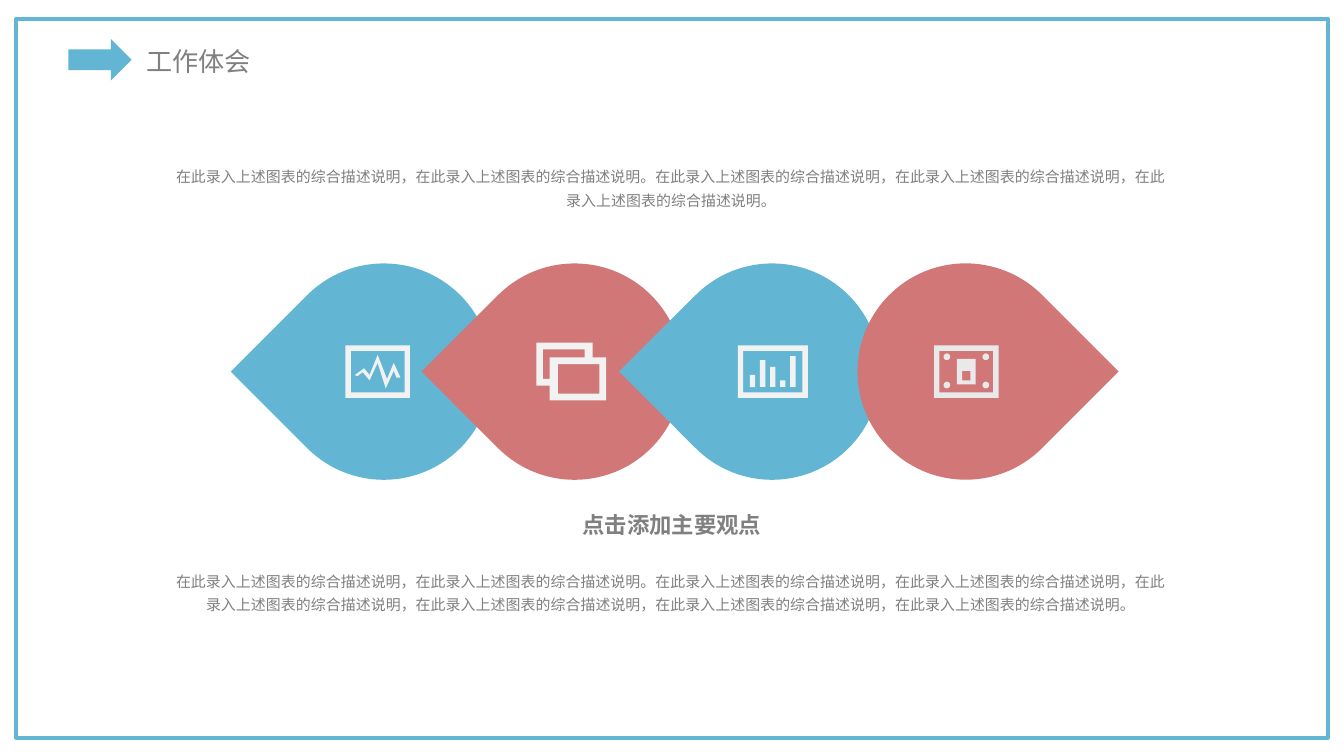
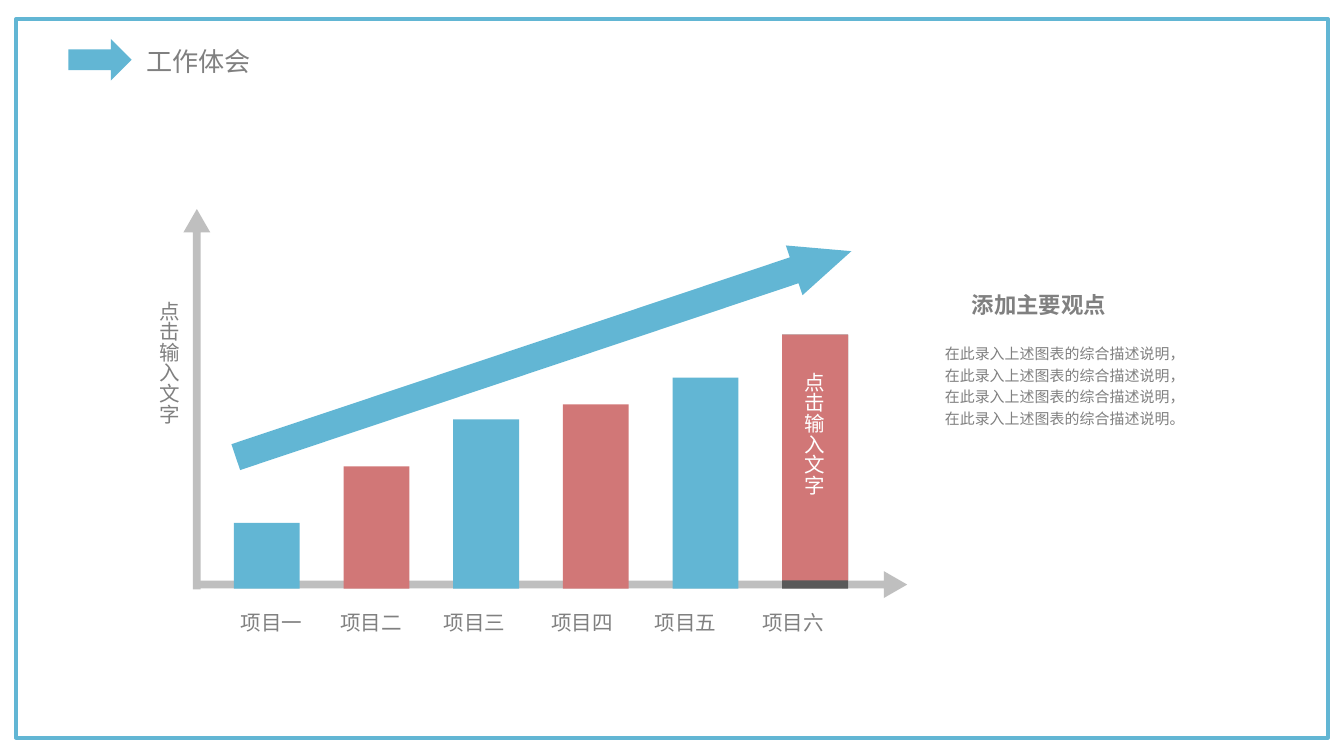
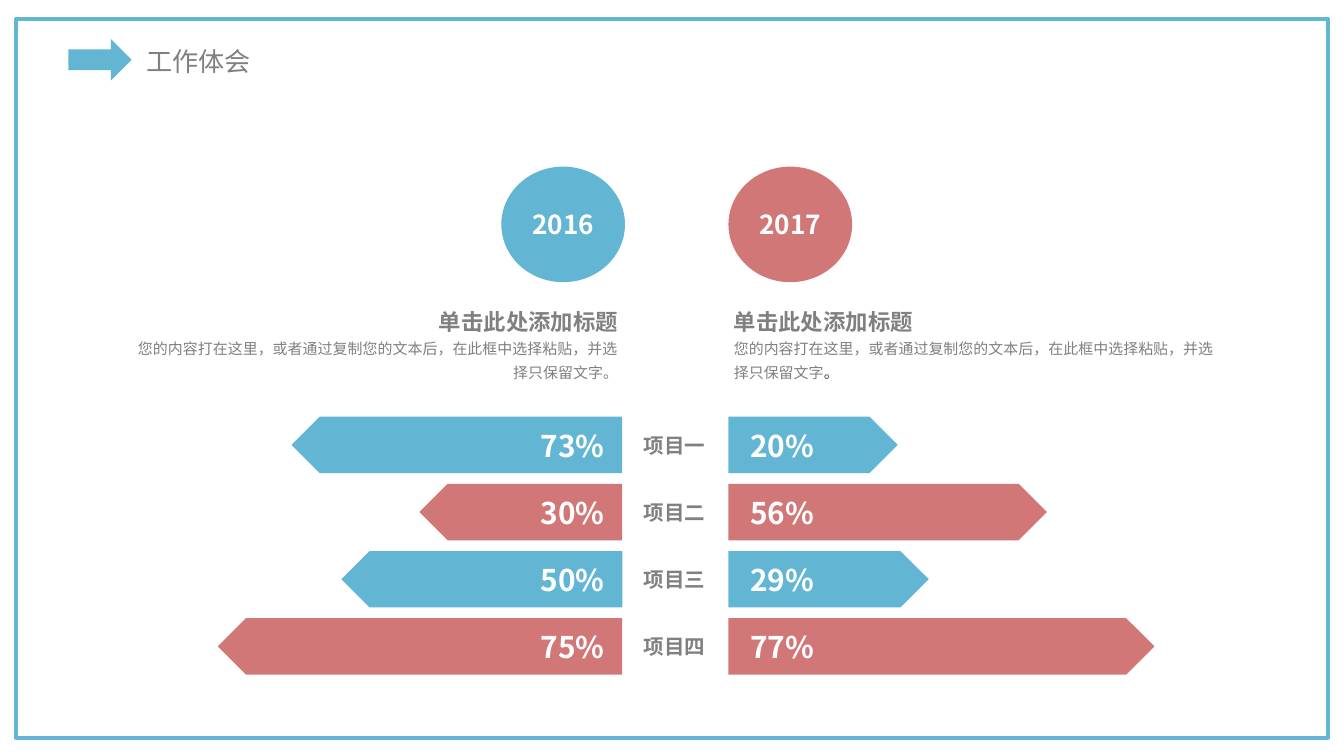
from lxml import etree
from pptx import Presentation
from pptx.dml.color import RGBColor
from pptx.enum.shapes import MSO_SHAPE
from pptx.enum.text import MSO_ANCHOR, MSO_AUTO_SIZE, PP_ALIGN
from pptx.oxml.ns import qn
from pptx.util import Inches, Pt

RECTANGLE, ELLIPSE = MSO_SHAPE.RECTANGLE, MSO_SHAPE.OVAL
ARROW, PENTAGON, TEARDROP = MSO_SHAPE.RIGHT_ARROW, MSO_SHAPE.PENTAGON, MSO_SHAPE.TEAR
LEFT, CENTER, RIGHT = PP_ALIGN.LEFT, PP_ALIGN.CENTER, PP_ALIGN.RIGHT
MIDDLE, FIT_SHAPE = MSO_ANCHOR.MIDDLE, MSO_AUTO_SIZE.SHAPE_TO_FIT_TEXT

COLORS = {
    "blue": "62B6D4", "red": "D17777", "text": "808080", "white": "FFFFFF",
    "axis": "BFBFBF", "base": "595959", "icon": "F2F2F2", "icon_dim": "E9E9E9",
    "stop": "404040",
}
PAIR = ("blue", "red")
FONT = "Noto Sans CJK SC"
PHRASE = "在此录入上述图表的综合描述说明"


def rgb(name):
    return RGBColor.from_string(COLORS[name])


def paint(shape, fill, line=None):
    shape.shadow.inherit = False
    shape.fill.solid()
    shape.fill.fore_color.rgb = rgb(fill)
    if line:
        shape.line.color.rgb = rgb(line)
        shape.line.width = Pt(2)
    else:
        shape.line.fill.background()
    return shape


def add_block(shapes, kind, area, fill, line=None, rotation=0, adjust=()):
    block = paint(shapes.add_shape(kind, *map(Inches, area)), fill, line)
    block.rotation = rotation
    for index, value in enumerate(adjust):
        block.adjustments[index] = value
    return block


def write(box, text, size=8, color="text", bold=False, align=LEFT, spacing=None,
          tabs=(), joined=False):
    """Add a paragraph, or with joined=True a span to the last paragraph."""
    frame = box.text_frame
    para = frame.paragraphs[-1]
    if para.runs and not joined:
        para = frame.add_paragraph()
    if not joined:
        para.alignment = align
        if spacing:
            para.line_spacing = spacing
    if tabs:
        stops = etree.SubElement(para._p.get_or_add_pPr(), qn("a:tabLst"))
        for stop in tabs:
            etree.SubElement(stops, qn("a:tab"), pos=str(Inches(stop)), algn="l")
    span = para.add_run()
    span.text = text
    span.font.size, span.font.bold = Pt(size), bold
    span.font.color.rgb = rgb(color)
    span.font.name = FONT
    etree.SubElement(span.font._element, qn("a:ea"), typeface=FONT)


def set_insets(box, side, end):
    frame = box.text_frame
    frame.margin_left = frame.margin_right = Inches(side)
    frame.margin_top = frame.margin_bottom = Inches(end)


def add_box(page, area, wrap=False, vertical=False, insets=(0.07, 0.04)):
    box = page.shapes.add_textbox(*map(Inches, area))
    frame = box.text_frame
    frame.word_wrap, frame.auto_size = wrap, FIT_SHAPE
    set_insets(box, *insets)
    if vertical:
        frame._txBody.bodyPr.set("vert", "eaVert")
    return box


def add_page(deck):
    """Page with the shared border and title."""
    page = deck.slides.add_slide(deck.slide_layouts[6])
    add_block(page.shapes, RECTANGLE, (0.12, 0.14, 9.76, 5.35), "white", line="blue")
    title = add_box(page, (0.98, 0.29, 1.03, 0.34), insets=(0.11, 0.05))
    write(title, "工作体会", size=14)
    add_block(page.shapes, ARROW, (0.51, 0.29, 0.47, 0.31), "blue")
    return page


# Icons: contours are in hundredths of an inch from the drop's corner

def corners(left, top, right, bottom):
    return [(left, top), (left, bottom), (right, bottom), (right, top)]


def add_outline(shapes, left, top, contours, fill="icon"):
    builder = shapes.build_freeform(*contours[0][0], scale=Inches(0.01))
    builder.add_line_segments(contours[0][1:])
    for contour in contours[1:]:
        builder.move_to(*contour[0])
        builder.add_line_segments(contour[1:])
    paint(builder.convert_to_shape(Inches(left), Inches(top)), fill)


def add_icon_frame(shapes, left, top, start, end, fill="icon"):
    add_outline(shapes, left, top, [corners(start, 61, end, 100),
                                    corners(start + 4, 65, end - 4, 96)], fill)


def draw_pulse(shapes, left, top):
    pulse = [(62, 83), (65, 81), (70, 87), (76, 74), (82, 93), (88, 80), (90, 85),
             (93, 85), (88, 74), (83, 86), (76, 68), (70, 83), (66, 78), (59, 83),
             (61, 84)]
    add_outline(shapes, left, top, [pulse])
    add_icon_frame(shapes, left, top, 52, 100)


def draw_windows(shapes, left, top):
    silhouette = [(94, 70), (94, 59), (52, 59), (52, 91), (62, 91), (62, 102),
                  (104, 102), (104, 70)]
    back_pane = [(57, 86), (57, 64), (88, 64), (88, 70), (62, 70), (62, 86)]
    add_outline(shapes, left, top, [silhouette, back_pane, corners(68, 75, 99, 97)])


def draw_mini_bars(shapes, left, top):
    for index, height in enumerate((0.09, 0.2, 0.15, 0.05, 0.23)):
        area = (left + 0.64 + 0.3 * index / 4, top + 0.92 - height, 0.04, height)
        add_block(shapes, RECTANGLE, area, "icon")
    add_icon_frame(shapes, left, top, 55, 107)


def draw_safe(shapes, left, top):
    add_icon_frame(shapes, left, top, 57, 105, "icon_dim")
    for down in (0.67, 0.88):
        for across in (0.64, 0.93):
            add_block(shapes, ELLIPSE, (left + across, top + down, 0.05, 0.05), "icon_dim")
    add_outline(shapes, left, top, [corners(74, 71, 88, 90), corners(78, 80, 84, 87)],
                "icon_dim")


def add_drop(page, left, top, fill, rotation, draw_icon):
    group = page.shapes.add_group_shape()
    add_block(group.shapes, TEARDROP, (left, top, 1.61, 1.61), fill, rotation=rotation)
    draw_icon(group.shapes, left, top)


def build_drops_page(deck):
    page = add_page(deck)
    drops = [(2.05, 225, draw_pulse), (3.47, 225, draw_windows),
             (4.94, 225, draw_mini_bars), (6.38, 45, draw_safe)]
    for index, (left, rotation, draw_icon) in enumerate(drops):
        add_drop(page, left, 1.96, PAIR[index % 2], rotation, draw_icon)

    heading = add_box(page, (4.25, 3.76, 1.5, 0.28))
    write(heading, "点击添加主要观点", size=12, bold=True, align=CENTER)
    opening = f"{PHRASE}，{PHRASE}。"
    for top, count in ((1.17, 3), (4.18, 6)):
        summary = add_box(page, (1.23, top, 7.53, 0.43), wrap=True)
        write(summary, opening + "，".join([PHRASE] * count) + "。",
              align=CENTER, spacing=1.3)


def add_growth_chart(page, left, top):
    """Bars on two arrow axes; left and top mark the bars' region."""
    shapes = page.shapes
    bottom, width, step = top + 1.89, 0.49, 4.08 / 5
    axis = {"fill": "axis", "adjust": (0.29, 0.87)}
    add_block(shapes, ARROW, (left - 1.69, top + 0.38, 2.83, 0.2), rotation=270, **axis)
    add_block(shapes, ARROW, (left - 0.3, bottom - 0.13, 5.31, 0.2), **axis)

    # Bars; the last one stands on a dark base
    for index, height in enumerate((0.49, 0.91, 1.26, 1.37, 1.57)):
        area = (left + step * index, bottom - height, width, height)
        add_block(shapes, RECTANGLE, area, PAIR[index % 2])
    last = left + step * 5
    add_block(shapes, RECTANGLE, (last, top, width, 1.89), "base")
    add_block(shapes, RECTANGLE, (last, top, width, 1.83), "red")
    add_block(shapes, ARROW, (left - 0.11, top - 0.05, 4.83, 0.39), "blue",
              rotation=341.5, adjust=(0.52, 1.15))

    # Labels
    labels = add_box(page, (left - 0.02, bottom + 0.12, 5.02, 0.26), wrap=True)
    write(labels, "\t".join("项目" + number for number in "一二三四五六"), size=11,
          tabs=(0.74, 1.51, 2.31, 3.08, 3.88))
    caption = "点击输入文字"
    axis_label = add_box(page, (left - 0.66, top - 0.29, 0.34, 1), vertical=True)
    write(axis_label, caption, size=11)
    bar_label = add_box(page, (last + 0.07, top + 0.24, 0.34, 1), vertical=True)
    bar_label.text_frame.vertical_anchor = MIDDLE
    write(bar_label, caption, size=11, color="white")


def build_growth_page(deck):
    page = add_page(deck)
    add_growth_chart(page, 1.74, 2.49)
    heading = add_box(page, (7.14, 2.12, 1.7, 0.3), wrap=True, insets=(0.09, 0.05))
    write(heading, "添加主要观点", size=12, bold=True)
    detail = add_box(page, (6.96, 2.5, 1.91, 0.88), wrap=True)
    write(detail, "，".join([PHRASE] * 4) + "。", spacing=1.2)


def add_year(page, left, top, year, fill):
    badge = add_block(page.shapes, ELLIPSE, (left, top, 0.92, 0.86), fill)
    set_insets(badge, 0.07, 0.04)
    badge.text_frame.vertical_anchor = MIDDLE
    write(badge, year, size=14, color="white", bold=True, align=CENTER)


def add_year_note(page, left, top, align, stop_color):
    note = add_box(page, (left, top, 3.73, 0.65), wrap=True, insets=(0.04, 0.02))
    write(note, "单击此处添加标题", size=12, bold=True, align=align, spacing=1.3)
    write(note, "您的内容打在这里，或者通过复制您的文本后，在此框中选择粘贴，并选择只保留文字",
          align=align, spacing=1.3)
    write(note, "。", color=stop_color, joined=True)


def add_comparison_row(page, top, fill, label, before, after):
    """Two opposed arrows, each given as (value, length), around a label."""
    bars = [(4.63 - before[1], 3.94, before), (5.42, 5.5, after)]
    for index, (left, text_left, (value, length)) in enumerate(bars):
        bar = add_block(page.shapes, PENTAGON, (left, top, length, 0.42), fill)
        if index == 0:
            bar._element.spPr.find(qn("a:xfrm")).set("flipH", "1")
        figure = add_box(page, (text_left, top + 0.04, 0.64, 0.35))
        write(figure, value, size=16, color="white", bold=True, align=CENTER)
    name = add_box(page, (4.71, top + 0.08, 0.62, 0.27))
    write(name, label, size=11, bold=True, align=CENTER)


def build_comparison_page(deck):
    page = add_page(deck)
    rows = [("项目一", ("73%", 2.46), ("20%", 1.26)),
            ("项目二", ("30%", 1.51), ("56%", 2.37)),
            ("项目三", ("50%", 2.09), ("29%", 1.49)),
            ("项目四", ("75%", 3.01), ("77%", 3.17))]
    for index, row in enumerate(rows):
        add_comparison_row(page, 3.1 + 0.5 * index, PAIR[index % 2], *row)
    add_year(page, 5.42, 1.24, "2017", "red")
    add_year(page, 3.73, 1.24, "2016", "blue")
    add_year_note(page, 5.42, 2.21, LEFT, "stop")
    add_year_note(page, 0.91, 2.21, RIGHT, "text")


def main():
    deck = Presentation()
    deck.slide_width = Inches(10)
    deck.slide_height = deck.slide_width * 9 // 16
    build_drops_page(deck)
    build_growth_page(deck)
    build_comparison_page(deck)
    deck.save("out.pptx")


if __name__ == "__main__":
    main()
